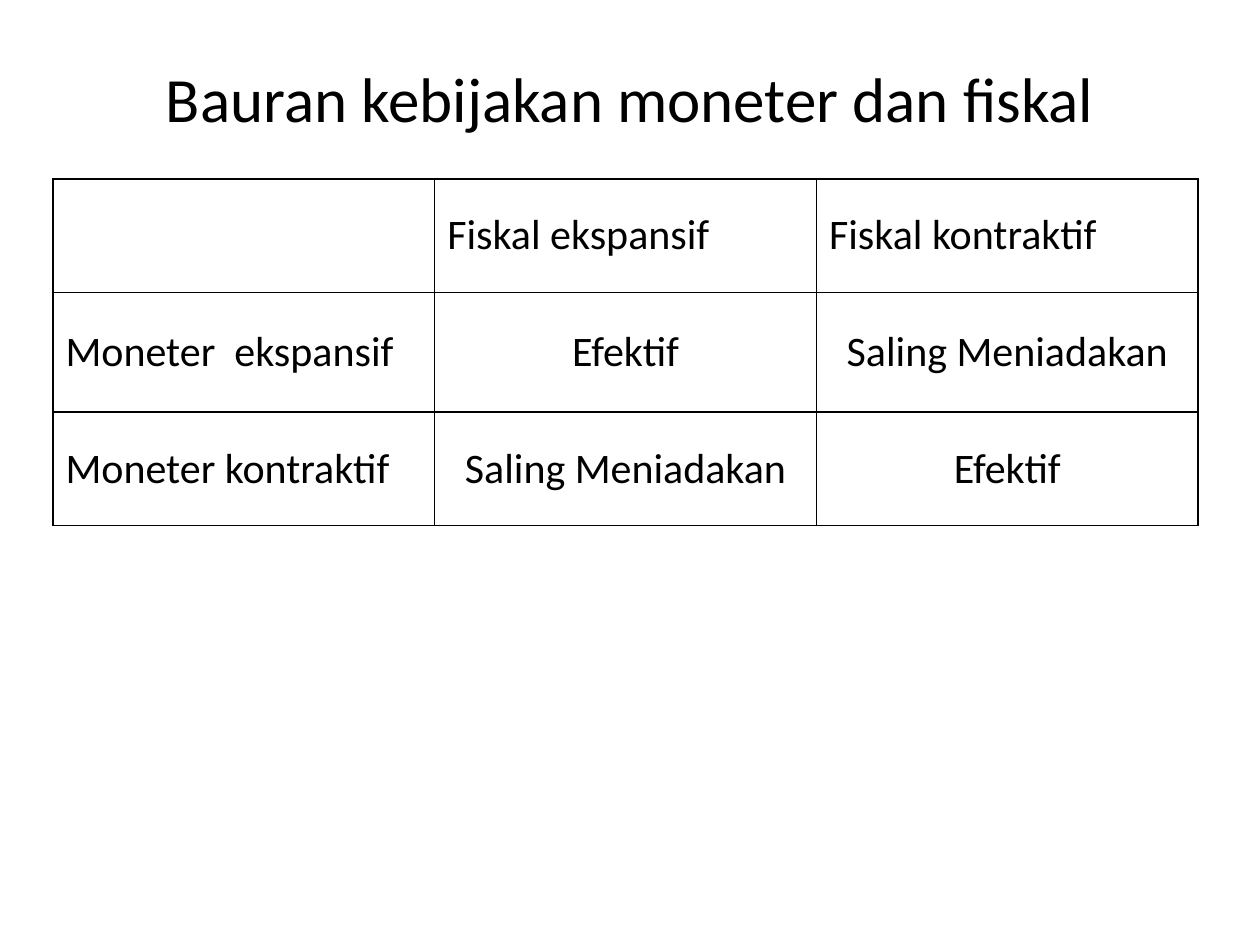
from dataclasses import dataclass

from lxml import etree
from pptx import Presentation
from pptx import util as u
from pptx.dml.color import RGBColor
from pptx.enum import text
from pptx.oxml.ns import qn

COLORS = {"ink": "000000", "paper": "FFFFFF"}
FONT = "Calibri"
COLUMN_WIDTH = 3.03
ROW_HEIGHTS = [0.9, 0.95, 0.9]


@dataclass
class PolicyRow:
    label: str
    outcomes: tuple[str, str]


HEADER = ("", "Fiskal ekspansif", "Fiskal kontraktif")
POLICY_ROWS = [
    PolicyRow("Moneter  ekspansif", ("Efektif", "Saling Meniadakan")),
    PolicyRow("Moneter kontraktif", ("Saling Meniadakan", "Efektif")),
]


def write_text(frame, content: str, *, size: float, centered: bool = False) -> None:
    paragraph = frame.paragraphs[0]
    paragraph.alignment = text.PP_ALIGN.CENTER if centered else text.PP_ALIGN.LEFT
    run = paragraph.add_run()
    run.text = content
    run.font.size = u.Pt(size)
    run.font.name = FONT
    run.font.color.rgb = RGBColor.from_string(COLORS["ink"])


def add_borders(cell, width: float = 1) -> None:
    properties = cell._tc.get_or_add_tcPr()
    for position, side in enumerate(("a:lnL", "a:lnR", "a:lnT", "a:lnB")):
        line = etree.Element(qn(side), w=str(u.Pt(width)))
        fill = etree.SubElement(line, qn("a:solidFill"))
        etree.SubElement(fill, qn("a:srgbClr"), val=COLORS["ink"])
        properties.insert(position, line)  # borders precede the cell fill


def add_title(slide, content: str) -> None:
    title = slide.shapes.title
    title.left, title.top = u.Inches(0.5), u.Inches(0.3)
    title.width, title.height = u.Inches(9), u.Inches(0.95)
    title.text_frame.vertical_anchor = text.MSO_ANCHOR.MIDDLE
    write_text(title.text_frame, content, size=36, centered=True)


def add_policy_table(slide) -> None:
    rows = [HEADER] + [(row.label, *row.outcomes) for row in POLICY_ROWS]
    table = slide.shapes.add_table(
        len(rows), len(HEADER), u.Inches(0.42), u.Inches(1.42),
        u.Inches(COLUMN_WIDTH * len(HEADER)), u.Inches(sum(ROW_HEIGHTS)),
    ).table
    table.first_row = table.horz_banding = False
    for column in table.columns:
        column.width = u.Inches(COLUMN_WIDTH)
    for row, height in zip(table.rows, ROW_HEIGHTS):
        row.height = u.Inches(height)

    for row_index, row in enumerate(rows):
        for column_index, content in enumerate(row):
            cell = table.cell(row_index, column_index)
            cell.vertical_anchor = text.MSO_ANCHOR.MIDDLE
            cell.fill.solid()
            cell.fill.fore_color.rgb = RGBColor.from_string(COLORS["paper"])
            add_borders(cell)
            if content:
                is_outcome = row_index > 0 and column_index > 0
                write_text(cell.text_frame, content, size=24, centered=is_outcome)


def main() -> None:
    presentation = Presentation()
    presentation.slide_width = u.Inches(10)
    presentation.slide_height = u.Inches(7.5)
    title_only = presentation.slide_layouts[5]
    slide = presentation.slides.add_slide(title_only)

    # Heading
    add_title(slide, "Bauran kebijakan moneter dan fiskal")

    # Policy mix matrix
    add_policy_table(slide)

    presentation.save("out.pptx")


if __name__ == "__main__":
    main()
